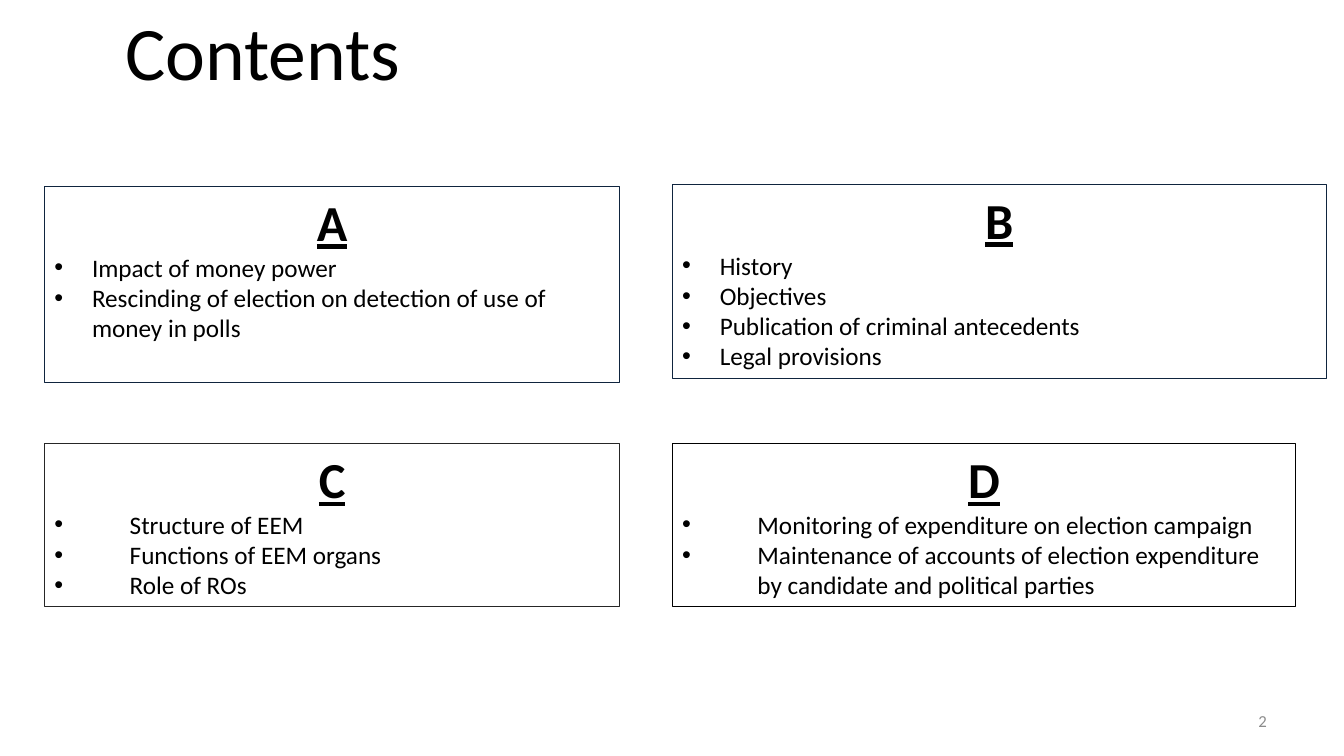
from lxml import etree
from pptx import Presentation
from pptx.dml.color import RGBColor
from pptx.enum.shapes import MSO_SHAPE
from pptx.enum.text import MSO_ANCHOR, MSO_AUTO_SIZE, PP_ALIGN
from pptx.oxml.ns import qn
from pptx.util import Cm, Pt

RECTANGLE = MSO_SHAPE.RECTANGLE
TOP, MIDDLE = MSO_ANCHOR.TOP, MSO_ANCHOR.MIDDLE
LEFT, CENTER, RIGHT = PP_ALIGN.LEFT, PP_ALIGN.CENTER, PP_ALIGN.RIGHT
FIXED_SIZE = MSO_AUTO_SIZE.NONE

WHITE = RGBColor(0xFF, 0xFF, 0xFF)
BLACK = RGBColor(0x00, 0x00, 0x00)
NAVY = RGBColor(0x0F, 0x24, 0x3E)
CHARCOAL = RGBColor(0x26, 0x26, 0x26)
GREY = RGBColor(0x8C, 0x8C, 0x8C)

TITLE_FORMAT = {"name": "Calibri", "size": Pt(54), "bold": False}
LETTER_FORMAT = {"name": "Calibri", "size": Pt(36), "bold": True, "underline": True}
ITEM_FORMAT = {"name": "Calibri", "size": Pt(18), "bold": False}
NUMBER_FORMAT = {"name": "Calibri", "size": Pt(12)}

LEFT_COLUMN, RIGHT_COLUMN = 1.12, 16.94
LEFT_WIDTH = 14.5
LOWER_TOP, LOWER_HEIGHT = 11.18, 4.11
NARROW_INDENT, WIDE_INDENT = 0.95, 1.9

SECTIONS = [
    ("A", (LEFT_COLUMN, 4.7, LEFT_WIDTH, 4.95), NAVY, NARROW_INDENT, [
        "Impact of money power",
        "Rescinding of election on detection of use of money in polls"]),
    ("B", (RIGHT_COLUMN, 4.65, 16.48, 4.88), NAVY, NARROW_INDENT, [
        "History",
        "Objectives",
        "Publication of criminal antecedents",
        "Legal provisions"]),
    ("C", (LEFT_COLUMN, LOWER_TOP, LEFT_WIDTH, LOWER_HEIGHT), CHARCOAL, WIDE_INDENT, [
        "Structure of EEM",
        "Functions of EEM organs",
        "Role of ROs"]),
    ("D", (RIGHT_COLUMN, LOWER_TOP, 15.72, LOWER_HEIGHT), BLACK, WIDE_INDENT, [
        "Monitoring of expenditure on election campaign",
        "Maintenance of accounts of election expenditure by candidate and political parties"]),
]


def write(para, text, formats, color, alignment):
    para.alignment = alignment
    span = para.add_run()
    span.text = text
    for name, value in formats.items():
        setattr(span.font, name, value)
    span.font.color.rgb = color


def prepare_frame(frame, anchor):
    frame.word_wrap = True
    frame.auto_size = FIXED_SIZE
    frame.vertical_anchor = anchor
    return frame.paragraphs[0]


def add_bullet(para, indent):
    properties = para._p.get_or_add_pPr()
    properties.set("marL", str(Cm(indent)))
    properties.set("indent", str(-Cm(indent)))
    font = etree.SubElement(properties, qn("a:buFont"))
    font.set("typeface", "Arial")
    bullet = etree.SubElement(properties, qn("a:buChar"))
    bullet.set("char", "•")


def place_title(page, box):
    title = page.shapes.title
    title.left, title.top, title.width, title.height = map(Cm, box)
    title.fill.solid()
    title.fill.fore_color.rgb = WHITE
    para = prepare_frame(title.text_frame, TOP)
    write(para, "Contents", TITLE_FORMAT, BLACK, LEFT)


def add_section(page, letter, box, line_color, indent, items):
    panel = page.shapes.add_shape(RECTANGLE, *map(Cm, box))
    panel.shadow.inherit = False
    panel.fill.background()
    panel.line.color.rgb = line_color
    panel.line.width = Pt(0.75)
    frame = panel.text_frame
    write(prepare_frame(frame, TOP), letter, LETTER_FORMAT, BLACK, CENTER)
    for item in items:
        para = frame.add_paragraph()
        write(para, item, ITEM_FORMAT, BLACK, LEFT)
        add_bullet(para, indent)


def add_page_number(page, box):
    label = page.shapes.add_textbox(*map(Cm, box))
    para = prepare_frame(label.text_frame, MIDDLE)
    write(para, "2", NUMBER_FORMAT, GREY, RIGHT)


def main():
    deck = Presentation()
    deck.slide_width, deck.slide_height = Cm(33.87), Cm(19.05)
    page = deck.slides.add_slide(deck.slide_layouts[5])
    place_title(page, (2.9, 0, 9.32, 2.51))
    for section in SECTIONS:
        add_section(page, *section)
    add_page_number(page, (24.28, 17.65, 7.9, 1.02))
    deck.save("out.pptx")


if __name__ == "__main__":
    main()
